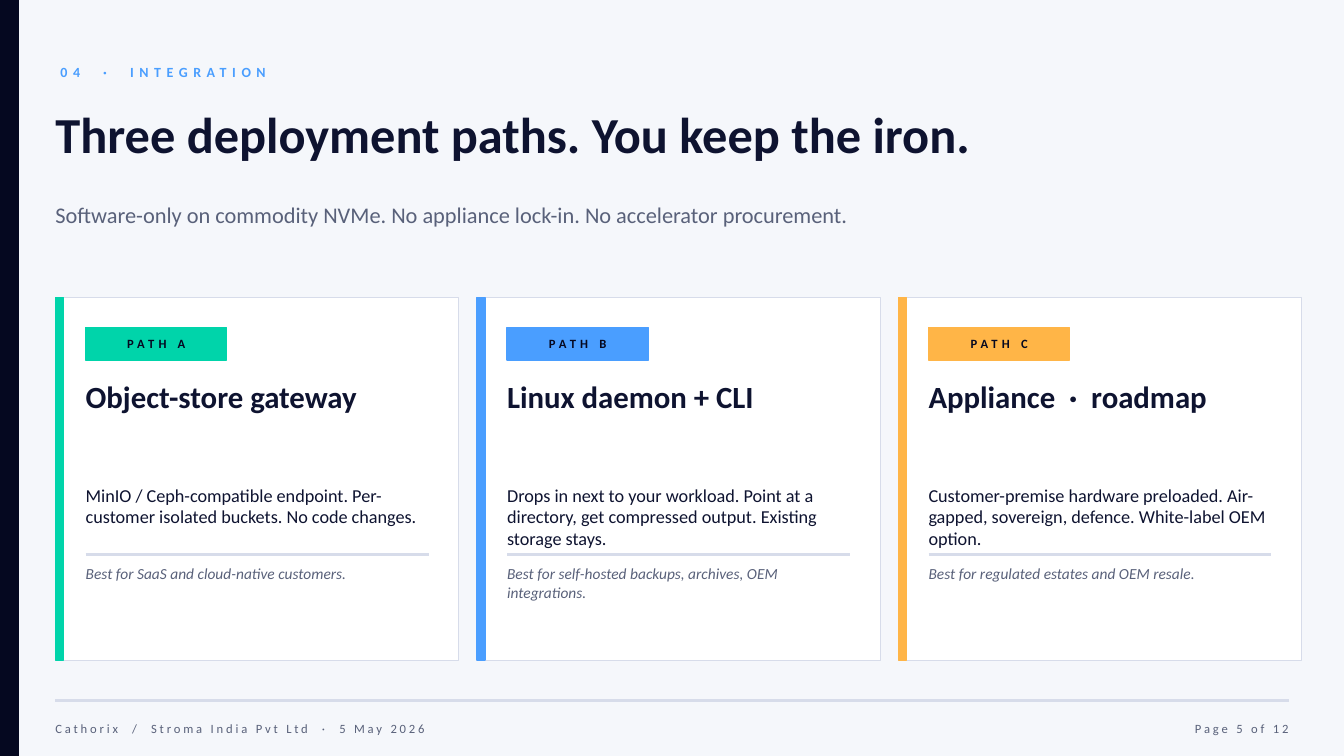
from lxml import etree
from pptx import Presentation
from pptx.dml.color import RGBColor
from pptx.enum.shapes import MSO_CONNECTOR as CONN, MSO_SHAPE as SHAPE
from pptx.enum.text import MSO_ANCHOR as ANCHOR, PP_ALIGN as ALIGN
from pptx.oxml.ns import qn
from pptx.util import Inches, Pt

# Colours
PAPER = RGBColor(0xF5, 0xF7, 0xFB)
WHITE = RGBColor(0xFF, 0xFF, 0xFF)
NIGHT = RGBColor(0x05, 0x08, 0x20)
INK = RGBColor(0x0E, 0x13, 0x30)
MUTED = RGBColor(0x59, 0x61, 0x7A)
RULE = RGBColor(0xD7, 0xDC, 0xEA)
GREEN = RGBColor(0x00, 0xD4, 0xAA)
BLUE = RGBColor(0x4A, 0x9E, 0xFF)
AMBER = RGBColor(0xFF, 0xB5, 0x47)

# Content
SECTION = "04  ·  INTEGRATION"
TITLE = "Three deployment paths. You keep the iron."
SUBTITLE = ("Software-only on commodity NVMe. No appliance lock-in. "
            "No accelerator procurement.")
PATHS = [
    ("PATH A", GREEN, "Object-store gateway",
     "MinIO / Ceph-compatible endpoint. Per-customer isolated buckets. "
     "No code changes.",
     "Best for SaaS and cloud-native customers."),
    ("PATH B", BLUE, "Linux daemon + CLI",
     "Drops in next to your workload. Point at a directory, get compressed "
     "output. Existing storage stays.",
     "Best for self-hosted backups, archives, OEM integrations."),
    ("PATH C", AMBER, "Appliance  ·  roadmap",
     "Customer-premise hardware preloaded. Air-gapped, sovereign, defence. "
     "White-label OEM option.",
     "Best for regulated estates and OEM resale."),
]
FOOTER = "Cathorix  /  Stroma India Pvt Ltd  ·  5 May 2026"
PAGE = "Page 5 of 12"

# Layout in inches
W, H = 13.33, 7.5
MARGIN = 0.55
CONTENT_W = W - 2 * MARGIN
CARD_W, CARD_H, CARD_TOP, GAP = 4, 3.6, 2.95, 0.18
PAD = 0.3
COPY_W = 3.5

prs = Presentation()
prs.slide_width, prs.slide_height = Inches(W), Inches(H)
s = prs.slides.add_slide(prs.slide_layouts[6])
s.background.fill.solid()
s.background.fill.fore_color.rgb = PAPER


def rect(x, y, w, h, fill, line=None, weight=1):
    sp = s.shapes.add_shape(SHAPE.RECTANGLE, Inches(x), Inches(y),
                            Inches(w), Inches(h))
    sp.shadow.inherit = False
    sp.fill.solid()
    sp.fill.fore_color.rgb = fill
    sp.line.color.rgb = line or fill
    sp.line.width = Pt(weight)
    return sp


def rule(x, y, w):
    c = s.shapes.add_connector(CONN.STRAIGHT, Inches(x), Inches(y),
                               Inches(x + w), Inches(y))
    c.line.color.rgb = RULE
    c.line.width = Pt(1.75)
    etree.SubElement(c._element.spPr, qn("a:effectLst"))


def box(x, y, w, h):
    return s.shapes.add_textbox(Inches(x), Inches(y), Inches(w), Inches(h))


def write(sp, text, size, color, bold=False, italic=False, spacing=0,
          align=ALIGN.LEFT, anchor=ANCHOR.TOP):
    tf = sp.text_frame
    tf.word_wrap = True
    tf.margin_left = tf.margin_right = tf.margin_top = tf.margin_bottom = 0
    tf.vertical_anchor = anchor
    p = tf.paragraphs[0]
    p.alignment = align
    r = p.add_run()
    r.text = text
    r.font.name, r.font.size = "Calibri", Pt(size)
    r.font.bold, r.font.italic = bold, italic
    r.font.color.rgb = color
    if spacing:
        r._r.get_or_add_rPr().set("spc", str(spacing * 100))


# Side band and heading
rect(0, 0, 0.18, H, NIGHT)
write(box(0.6, 0.55, 8, 0.32), SECTION, 10, BLUE, bold=True, spacing=4,
      anchor=ANCHOR.MIDDLE)
write(box(MARGIN, 0.9, CONTENT_W, 0.85), TITLE, 36, INK, bold=True,
      anchor=ANCHOR.MIDDLE)
write(box(MARGIN, 1.85, CONTENT_W, 0.55), SUBTITLE, 16, MUTED,
      anchor=ANCHOR.MIDDLE)

# Path cards
for i, (tag, accent, name, body, best_for) in enumerate(PATHS):
    left = MARGIN + i * (CARD_W + GAP)
    x = left + PAD
    rect(left, CARD_TOP, CARD_W, CARD_H, WHITE, RULE, 0.75)
    rect(left, CARD_TOP, 0.08, CARD_H, accent)
    write(rect(x, CARD_TOP + PAD, 1.4, 0.32, accent), tag, 9, NIGHT,
          bold=True, spacing=3, align=ALIGN.CENTER, anchor=ANCHOR.MIDDLE)
    write(box(x, CARD_TOP + 0.8, COPY_W, 0.85), name, 22, INK, bold=True)
    write(box(x, CARD_TOP + 1.85, COPY_W, 0.7), body, 13, INK)
    rule(x, CARD_TOP + 2.55, CARD_W - 2 * PAD)
    write(box(x, CARD_TOP + 2.65, COPY_W, 0.8), best_for, 11, MUTED,
          italic=True)

# Footer
rule(MARGIN, 6.95, CONTENT_W)
write(box(MARGIN, 7.08, 8, 0.3), FOOTER, 9, MUTED, spacing=2,
      anchor=ANCHOR.MIDDLE)
write(box(W - MARGIN - 2.5, 7.08, 2.5, 0.3), PAGE, 9, MUTED, spacing=2,
      align=ALIGN.RIGHT, anchor=ANCHOR.MIDDLE)

prs.save("out.pptx")
